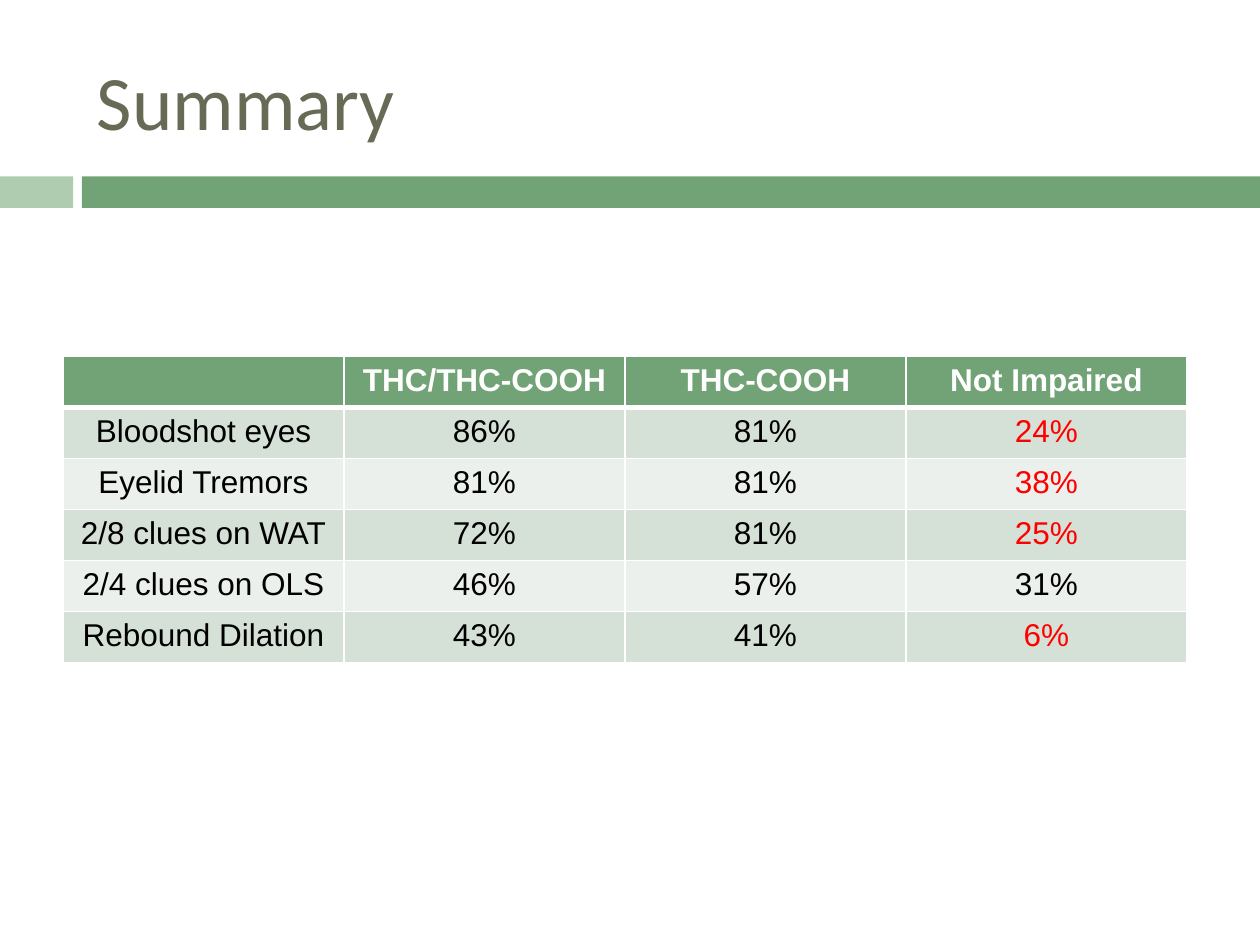
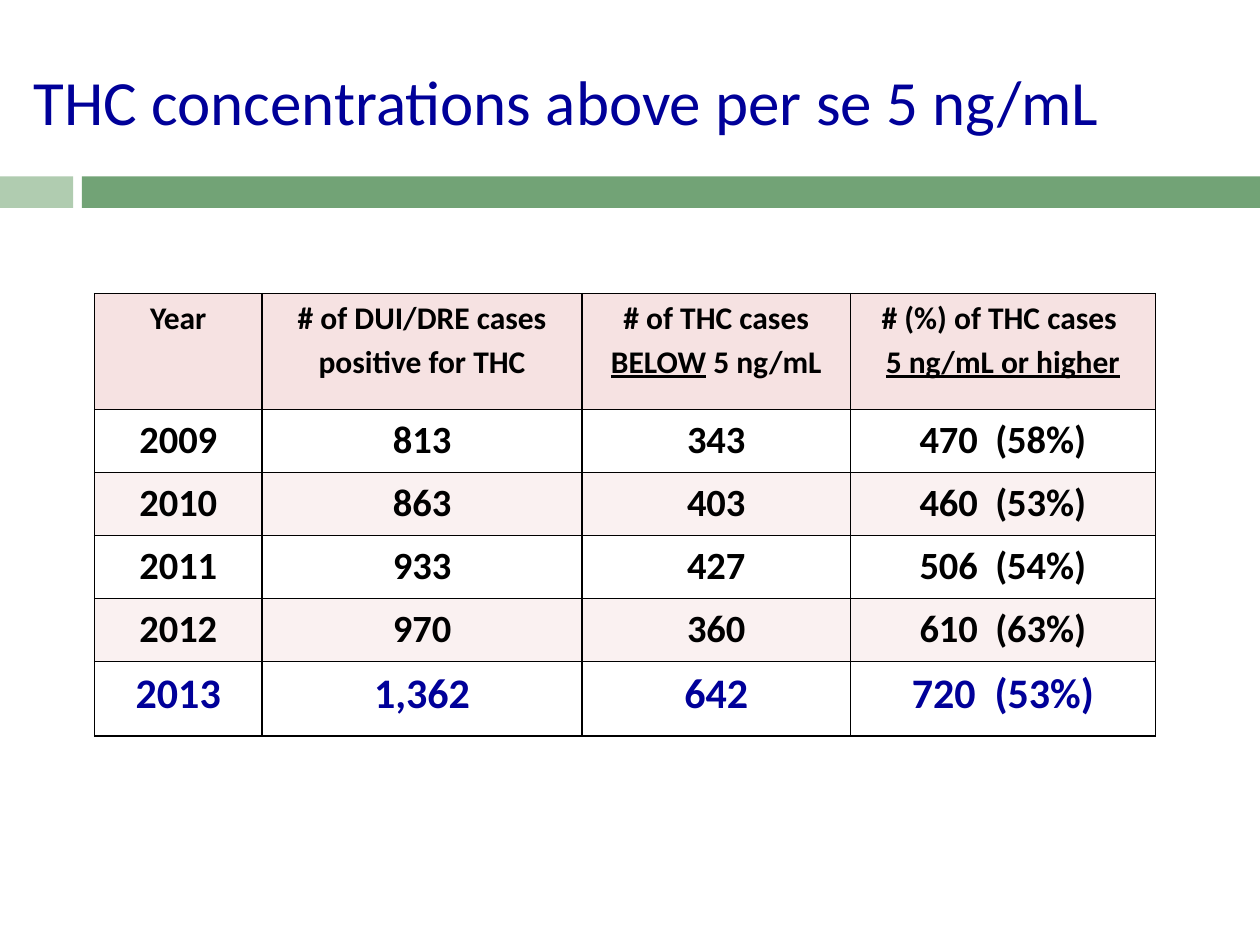
from dataclasses import dataclass

from lxml import etree
from pptx import Presentation
from pptx.dml.color import RGBColor as RGB
from pptx.enum.shapes import MSO_SHAPE as Shape
from pptx.enum.text import MSO_ANCHOR as Anchor, PP_ALIGN as Align
from pptx.oxml.ns import qn
from pptx.util import Inches, Pt

# Content: "_" switches underline on and off, "\n" starts a paragraph
SUMMARY_TITLE = "Summary"
SUMMARY_ROWS = [
    ["", "THC/THC-COOH", "THC-COOH", "Not Impaired"],
    ["Bloodshot eyes", "86%", "81%", "24%"],
    ["Eyelid Tremors", "81%", "81%", "38%"],
    ["2/8 clues on WAT", "72%", "81%", "25%"],
    ["2/4 clues on OLS", "46%", "57%", "31%"],
    ["Rebound Dilation", "43%", "41%", "6%"],
]
LOW_RATES = {"24%", "38%", "25%", "6%"}

LEVELS_TITLE = "THC concentrations above per se 5 ng/mL"
LEVELS_ROWS = [
    ["Year", "# of DUI/DRE cases positive for THC",
     "# of THC cases _BELOW_ 5 ng/mL", "# (%) of THC cases \n_5 ng/mL or higher_"],
    ["2009", "813", "343", "470  (58%)"],
    ["2010", "863", "403", "460  (53%)"],
    ["2011", "933", "427", "506  (54%)"],
    ["2012", "970", "360", "610  (63%)"],
    ["2013", "1,362", "642", "720  (53%)"],
]


@dataclass(frozen=True)
class Theme:
    title_font: str = "Calibri"
    table_font: str = "Arial"
    title_size: int = 44
    long_title_size: int = 36
    small: int = 18
    medium: int = 22
    large: int = 24
    olive: str = "676A55"
    navy: str = "000099"
    green: str = "72A376"
    pale_green: str = "B0CCB0"
    green_bands: tuple = ("D5E0D6", "EBF0EC")
    pink: str = "F6E2E2"
    pink_bands: tuple = (None, "FAF1F1")
    black: str = "000000"
    white: str = "FFFFFF"
    red: str = "FF0000"


T = Theme()


def add_run(p, text, font, size, color, bold=False, underline=False):
    r = p.add_run()
    r.text = text
    f = r.font
    f.name, f.size, f.bold, f.underline = font, Pt(size), bold, underline
    f.color.rgb = RGB.from_string(color)


def add_slide(prs, title, box, size, color):
    """Blank slide with the two-part band and a title."""
    s = prs.slides.add_slide(prs.slide_layouts[6])
    for left, width, fill in ((0, 0.58, T.pale_green), (0.65, 9.35, T.green)):
        sp = s.shapes.add_shape(Shape.RECTANGLE, Inches(left), Inches(1.4),
                                Inches(width), Inches(0.25))
        sp.shadow.inherit = False
        sp.fill.solid()
        sp.fill.fore_color.rgb = RGB.from_string(fill)
        sp.line.fill.background()
    tf = s.shapes.add_textbox(*map(Inches, box)).text_frame
    tf.word_wrap = True
    tf.vertical_anchor = Anchor.MIDDLE
    add_run(tf.paragraphs[0], title, T.title_font, size, color)
    return s


def set_borders(cell, color, top=1, bottom=1):
    tcPr = cell._tc.get_or_add_tcPr()
    widths = {"lnL": 1, "lnR": 1, "lnT": top, "lnB": bottom}
    for i, (side, width) in enumerate(widths.items()):
        ln = etree.Element(qn("a:" + side), w=str(Pt(width)))
        fill = etree.SubElement(ln, qn("a:solidFill"))
        etree.SubElement(fill, qn("a:srgbClr"), val=color)
        tcPr.insert(i, ln)


def add_table(s, rows, left, top, widths, heights, border, header_rule,
              header_fill, bands, font, text_style, margins=None, spacing=None):
    """text_style(row, text) gives size, colour and bold of a cell."""
    tb = s.shapes.add_table(len(rows), len(widths), Inches(left), Inches(top),
                            Inches(sum(widths)), Inches(sum(heights))).table
    for col, width in zip(tb.columns, widths):
        col.width = Inches(width)
    for i, (row, height) in enumerate(zip(rows, heights)):
        tb.rows[i].height = Inches(height)
        fill = bands[(i - 1) % 2] if i else header_fill
        for j, text in enumerate(row):
            cell = tb.cell(i, j)
            if fill:
                cell.fill.solid()
                cell.fill.fore_color.rgb = RGB.from_string(fill)
            else:
                cell.fill.background()
            set_borders(cell, border, top=header_rule if i == 1 else 1,
                        bottom=header_rule if i == 0 else 1)
            if margins:
                cell.margin_left = cell.margin_right = Inches(margins[0])
                cell.margin_top = cell.margin_bottom = Inches(margins[1])
            fill_cell(cell.text_frame, text, font, text_style(i, text), spacing)


def fill_cell(tf, text, font, style, spacing):
    for n, line in enumerate(text.split("\n")):
        p = tf.add_paragraph() if n else tf.paragraphs[0]
        p.alignment = Align.CENTER
        if spacing:
            p.line_spacing = spacing
        for k, part in enumerate(line.split("_")):
            if part:
                add_run(p, part, font, *style, underline=k % 2 == 1)


def summary_style(row, text):
    if row == 0:
        return T.small, T.white, True
    return T.small, T.red if text in LOW_RATES else T.black, False


def levels_style(row, text):
    if row == 0:
        return T.small, T.black, True
    if row == len(LEVELS_ROWS) - 1:
        return T.large, T.navy, True
    return T.medium, T.black, True


def main():
    prs = Presentation()
    prs.slide_width, prs.slide_height = Inches(10), Inches(7.5)

    # Summary of signs
    s = add_slide(prs, SUMMARY_TITLE, (0.67, 0.25, 8.92, 1.08),
                  T.title_size, T.olive)
    add_table(s, SUMMARY_ROWS, 0.5, 2.83, [2.23] * 4, [2.43 / 6] * 6,
              T.white, 3, T.green, T.green_bands, T.table_font, summary_style)

    # Concentrations by year
    s = add_slide(prs, LEVELS_TITLE, (0.17, 0.17, 9.5, 1.25),
                  T.long_title_size, T.navy)
    add_table(s, LEVELS_ROWS, 0.75, 2.33, [1.33, 2.54, 2.13, 2.42],
              [0.92] + [0.5] * 4 + [0.59], T.black, 1, T.pink, T.pink_bands,
              T.title_font, levels_style, margins=(0.07, 0), spacing=1.15)

    prs.save("out.pptx")


if __name__ == "__main__":
    main()
